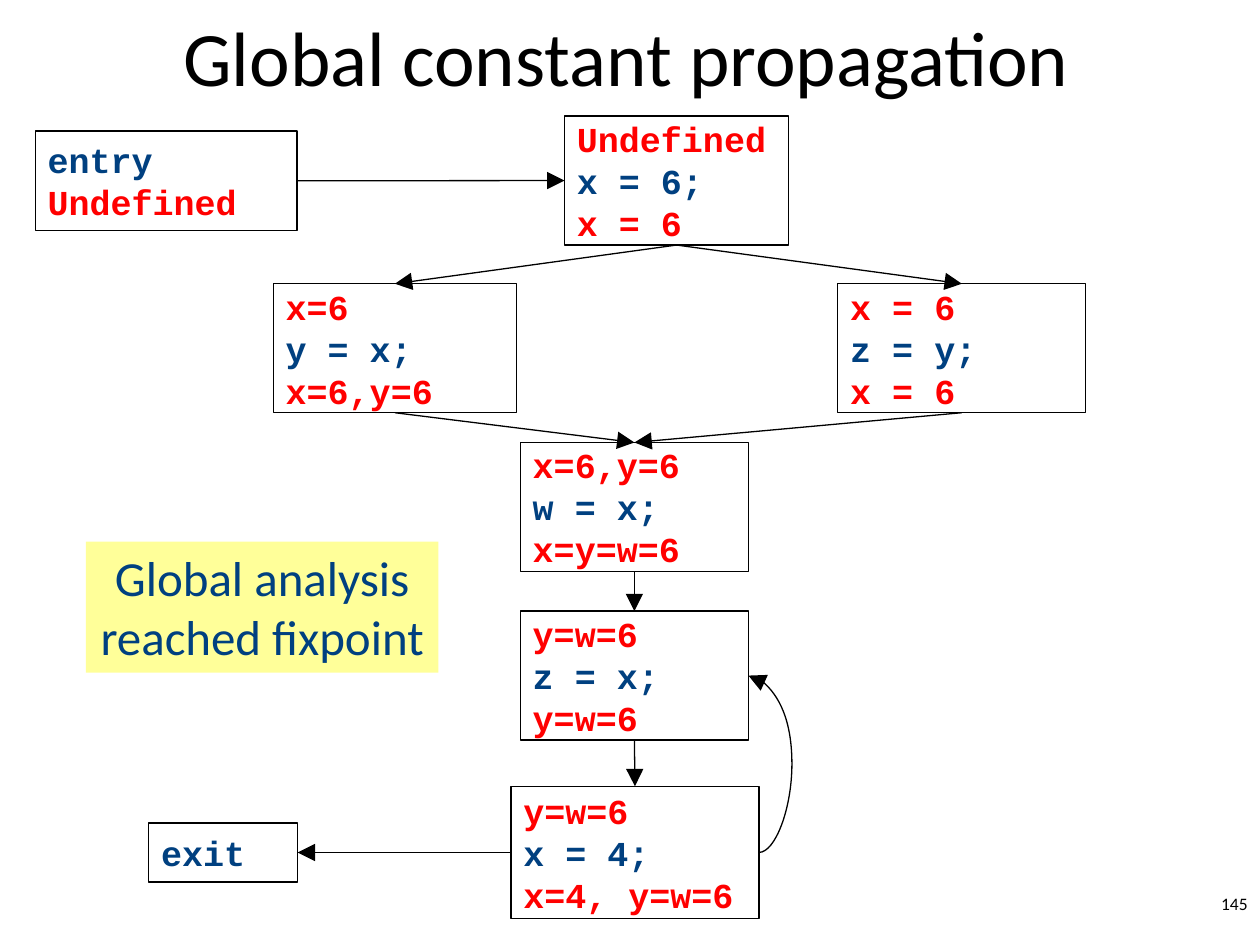
import pptx
import pptx.util
import pptx.dml.color
import pptx.enum.shapes
import pptx.enum.text
import pptx.oxml.ns
import lxml.etree

Cm = pptx.util.Cm
Pt = pptx.util.Pt
ALIGN = pptx.enum.text.PP_ALIGN
ANCHOR = pptx.enum.text.MSO_ANCHOR
CONNECTOR = pptx.enum.shapes.MSO_CONNECTOR

COLOURS = {"ink": "000000", "code": "004080", "fact": "FF0000", "note": "FFFF99"}
TOP, LEFT, BOTTOM, RIGHT = range(4)

BLOCKS = {
    "entry": ((0, 0.3, 5.28, 2.01), [("code", "entry"), ("fact", "Undefined")]),
    "start": ((10.67, 0, 4.52, 2.6),
              [("fact", "Undefined"), ("code", "x = 6;"), ("fact", "x = 6")]),
    "left": ((4.8, 3.38, 4.9, 2.6),
             [("fact", "x=6"), ("code", "y = x;"), ("fact", "x=6,y=6")]),
    "right": ((16.18, 3.38, 5, 2.6),
              [("fact", "x = 6"), ("code", "z = y;"), ("fact", "x = 6")]),
    "join": ((9.78, 6.58, 4.6, 2.6),
             [("fact", "x=6,y=6"), ("code", "w = x;"), ("fact", "x=y=w=6")]),
    "loop": ((9.78, 9.98, 4.6, 2.6),
             [("fact", "y=w=6"), ("code", "z = x;"), ("fact", "y=w=6")]),
    "last": ((9.59, 13.51, 5, 2.67),
             [("fact", "y=w=6"), ("code", "x = 4;"), ("fact", "x=4, y=w=6")]),
    "exit": ((2.29, 14.25, 3, 1.19), [("code", "exit")]),
}

EDGES = [
    ("entry", RIGHT, "start", LEFT),
    ("start", BOTTOM, "left", TOP),
    ("start", BOTTOM, "right", TOP),
    ("left", BOTTOM, "join", TOP),
    ("right", BOTTOM, "join", TOP),
    ("join", BOTTOM, "loop", TOP),
    ("loop", BOTTOM, "last", TOP),
    ("last", LEFT, "exit", RIGHT),
    ("last", RIGHT, "loop", RIGHT),
]


def colour(name):
    """Return the named colour of the slide."""
    return pptx.dml.color.RGBColor.from_string(COLOURS[name])


def add_span(para, text, size, name, font="Calibri", bold=False):
    """Add one formatted run to a paragraph."""
    span = para.add_run()
    span.text = text
    span.font.size = Pt(size)
    span.font.name = font
    span.font.bold = bold
    span.font.color.rgb = colour(name)


def paragraphs(frame, count, align):
    """Yield the given number of aligned paragraphs of a text frame."""
    for index in range(count):
        para = frame.add_paragraph() if index else frame.paragraphs[0]
        para.alignment = align
        yield para


def place_title(page, left, top, width, height):
    """Move the title placeholder into its box and fill it."""
    title = page.shapes.title
    title.left, title.top, title.width, title.height = map(Cm, (left, top, width, height))
    title.text_frame.vertical_anchor = ANCHOR.MIDDLE
    para = title.text_frame.paragraphs[0]
    para.alignment = ALIGN.CENTER
    add_span(para, "Global constant propagation", 44, "ink")


def add_block(page, left, top, width, height, lines):
    """Add one basic block with its code and the facts around it."""
    block = page.shapes.add_shape(
        pptx.enum.shapes.MSO_SHAPE.RECTANGLE, *map(Cm, (left, top, width, height)))
    block.shadow.inherit = False
    block.fill.background()
    block.line.color.rgb = colour("ink")
    block.line.width = Pt(0.75)
    frame = block.text_frame
    frame.word_wrap = True
    frame.vertical_anchor = ANCHOR.MIDDLE
    frame.margin_top = frame.margin_bottom = Cm(0.05)
    for para, (name, text) in zip(paragraphs(frame, len(lines), ALIGN.LEFT), lines):
        add_span(para, text, 20, name, "Courier New", True)
    return block


def add_edge(page, source, source_side, target, target_side):
    """Join two blocks by an arrow, curved when it returns to the same side."""
    curved = source_side == target_side
    kind = CONNECTOR.CURVE if curved else CONNECTOR.STRAIGHT
    edge = page.shapes.add_connector(kind, 0, 0, 0, 0)
    edge.begin_connect(source, source_side)
    edge.end_connect(target, target_side)
    edge.line.color.rgb = colour("ink")
    edge.line.width = Pt(0.75)
    qn = pptx.oxml.ns.qn
    properties = edge._element.spPr
    lxml.etree.SubElement(edge.line._get_or_add_ln(), qn("a:tailEnd"),
                          type="triangle", w="lg", len="lg")
    lxml.etree.SubElement(properties, qn("a:effectLst"))
    if curved:
        guides = properties.find(qn("a:prstGeom")).get_or_add_avLst()
        lxml.etree.SubElement(guides, qn("a:gd"), name="adj1", fmla="val -317500")


def add_flow_graph(page, left, top):
    """Draw the control flow graph from its top left corner."""
    blocks = {
        name: add_block(page, left + x, top + y, width, height, lines)
        for name, ((x, y, width, height), lines) in BLOCKS.items()
    }
    for source, source_side, target, target_side in EDGES:
        add_edge(page, blocks[source], source_side, blocks[target], target_side)


def add_label(page, left, top, width, height, lines, size, name, align, fill=None):
    """Add a text box with one paragraph a line."""
    label = page.shapes.add_textbox(*map(Cm, (left, top, width, height)))
    label.text_frame.word_wrap = fill is None
    if fill:
        label.fill.solid()
        label.fill.fore_color.rgb = colour(fill)
    for para, text in zip(paragraphs(label.text_frame, len(lines), align), lines):
        add_span(para, text, size, name)


def main():
    """Build the slide and save it."""
    deck = pptx.Presentation()
    deck.slide_width, deck.slide_height = Cm(25.4), Cm(19.05)
    page = deck.slides.add_slide(deck.slide_layouts[5])
    place_title(page, 1.83, -0.46, 21.59, 3.18)
    add_flow_graph(page, 0.71, 2.34)
    add_label(page, 1.73, 10.92, 7.11, 2.64, ["Global analysis", "reached fixpoint"],
              28, "code", ALIGN.CENTER, "note")
    add_label(page, 20.12, 17.88, 5.28, 0.76, ["145"], 10, "ink", ALIGN.RIGHT)
    deck.save("out.pptx")


if __name__ == "__main__":
    main()
